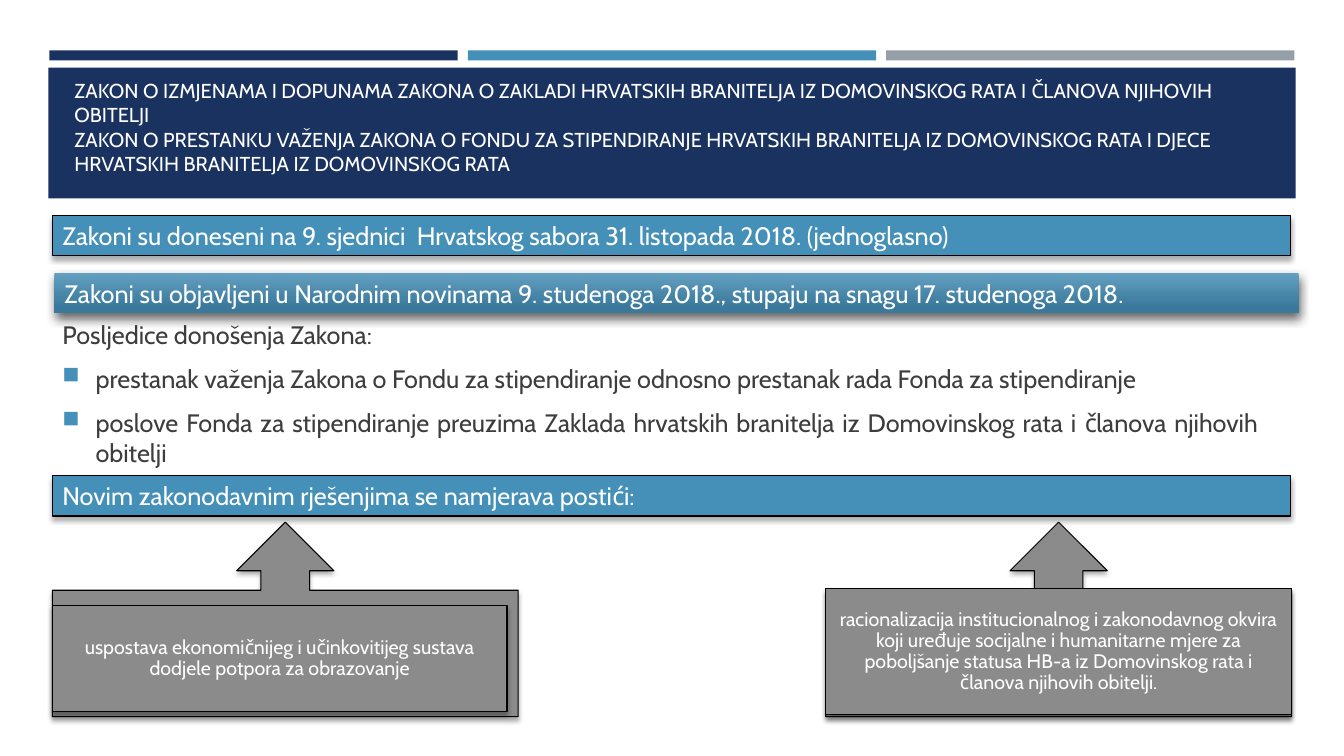
from dataclasses import dataclass
from typing import NamedTuple, Optional

from lxml import etree
from pptx import Presentation, util as u
from pptx.dml.color import RGBColor
from pptx.enum import shapes, text
from pptx.oxml import ns

RECT = shapes.MSO_SHAPE.RECTANGLE
CALLOUT = shapes.MSO_SHAPE.UP_ARROW_CALLOUT
ALIGN = text.PP_ALIGN
ANCHOR = text.MSO_ANCHOR


class Box(NamedTuple):
    """Left, top, width and height in percent of the slide's size."""
    left: float
    top: float
    width: float
    height: float


class Shadow(NamedTuple):
    opacity: int
    blur: float
    distance: float
    angle: int


@dataclass(frozen=True)
class Theme:
    font: str = "Cabin"
    navy: str = "1A3260"
    blue: str = "4590B8"
    silver: str = "969FA7"
    gray: str = "8B8B8B"
    ink: str = "3D3D3D"
    white: str = "FFFFFF"
    black: str = "000000"
    gradient: tuple = (("639FC1", 0), ("3A799B", 0.84))
    title_size: float = 14.4
    body_size: float = 18
    panel_size: float = 14
    soft: Shadow = Shadow(32, 3.5, 2.2, 90)
    strong: Shadow = Shadow(60, 7, 3, 84)


@dataclass(frozen=True)
class Banner:
    box: Box
    words: str
    raised: bool = False


@dataclass(frozen=True)
class Goal:
    callout: Box
    panel: Box
    words: str


THEME = Theme()

STRIPES = (THEME.navy, THEME.blue, THEME.silver)
STRIPE = Box(3.68, 6.67, 30.38, 1.33)
STRIPE_PITCH = 31.13

HEADER = Box(3.6, 8.93, 92.8, 17.33)
TITLE = Box(4.8, 9.73, 90.47, 17.33)
LAWS = (
    "ZAKON O IZMJENAMA I DOPUNAMA ZAKONA O ZAKLADI HRVATSKIH BRANITELJA IZ "
    "DOMOVINSKOG RATA I ČLANOVA NJIHOVIH OBITELJI",
    "ZAKON O PRESTANKU VAŽENJA ZAKONA O FONDU ZA STIPENDIRANJE HRVATSKIH "
    "BRANITELJA IZ DOMOVINSKOG RATA I DJECE HRVATSKIH BRANITELJA IZ "
    "DOMOVINSKOG RATA",
)

CONSEQUENCES_BOX = Box(3.9, 39.33, 90.47, 25.47)
CONSEQUENCES = (
    "Posljedice donošenja Zakona:",
    "prestanak važenja Zakona o Fondu za stipendiranje odnosno prestanak rada "
    "Fonda za stipendiranje",
    "poslove Fonda za stipendiranje preuzima Zaklada hrvatskih branitelja iz "
    "Domovinskog rata i članova njihovih obitelji",
)

BANNERS = (
    Banner(Box(3.9, 28.53, 92.12, 5.33),
           "Zakoni su doneseni na 9. sjednici  Hrvatskog sabora 31. listopada "
           "2018. (jednoglasno)"),
    Banner(Box(3.9, 62.93, 92.12, 5.33),
           "Novim zakonodavnim rješenjima se namjerava postići:"),
    Banner(Box(4.05, 36.13, 92.57, 5.33),
           "Zakoni su objavljeni u Narodnim novinama 9. studenoga 2018., "
           "stupaju na snagu 17. studenoga 2018.", raised=True),
)

GOALS = (
    Goal(Box(3.9, 69.07, 34.66, 25.73), Box(3.9, 80.13, 33.83, 14),
         "uspostava ekonomičnijeg i učinkovitijeg sustava dodjele potpora za "
         "obrazovanje"),
    Goal(Box(61.44, 69.07, 34.66, 25.73), Box(61.44, 77.87, 34.66, 16.67),
         "racionalizacija institucionalnog i zakonodavnog okvira koji uređuje "
         "socijalne i humanitarne mjere za poboljšanje statusa HB-a iz "
         "Domovinskog rata i članova njihovih obitelji."),
)

deck = Presentation()
deck.slide_width, deck.slide_height = u.Inches(13.33), u.Inches(7.5)
slide = deck.slides.add_slide(deck.slide_layouts[6])


def place(box: Box) -> tuple:
    across, down = deck.slide_width / 100, deck.slide_height / 100
    return (int(box.left * across), int(box.top * down),
            int(box.width * across), int(box.height * down))


def add_shadow(shape, shadow: Shadow) -> None:
    effects = shape.element.spPr.find(ns.qn("a:effectLst"))
    outer = etree.SubElement(
        effects, ns.qn("a:outerShdw"), blurRad=str(u.Pt(shadow.blur)),
        dist=str(u.Pt(shadow.distance)), dir=str(shadow.angle * 60000),
        algn="ctr", rotWithShape="0")
    color = etree.SubElement(outer, ns.qn("a:srgbClr"), val=THEME.black)
    etree.SubElement(color, ns.qn("a:alpha"), val=str(shadow.opacity * 1000))


def add_block(kind, box: Box, fill: str, outlined: bool = False,
              shadow: Optional[Shadow] = None):
    block = slide.shapes.add_shape(kind, *place(box))
    block.shadow.inherit = False
    block.fill.solid()
    block.fill.fore_color.rgb = RGBColor.from_string(fill)
    if outlined:
        block.line.color.rgb = RGBColor.from_string(THEME.black)
        block.line.width = u.Pt(0.75)
    else:
        block.line.fill.background()
    if shadow:
        add_shadow(block, shadow)
    return block


def write(shape, lines: tuple, size: float, color: str, align=ALIGN.LEFT,
          anchor=ANCHOR.TOP):
    frame = shape.text_frame
    frame.text = "\n".join(lines)
    frame.word_wrap = True
    frame.vertical_anchor = anchor
    for paragraph in frame.paragraphs:
        paragraph.alignment = align
        for run in paragraph.runs:
            run.font.name = THEME.font
            run.font.size = u.Pt(size)
            run.font.color.rgb = RGBColor.from_string(color)
    return frame


def add_bullet(paragraph) -> None:
    paragraph.alignment = ALIGN.JUSTIFY
    props = paragraph._p.get_or_add_pPr()
    props.set("marL", str(u.Inches(0.33)))
    props.set("indent", str(u.Inches(-0.33)))
    color = etree.SubElement(props, ns.qn("a:buClr"))
    etree.SubElement(color, ns.qn("a:srgbClr"), val=THEME.blue)
    etree.SubElement(props, ns.qn("a:buSzPct"), val="92000")
    etree.SubElement(props, ns.qn("a:buChar"), char="■")


# Stripes and header
for column, stripe_color in enumerate(STRIPES):
    left = STRIPE.left + column * STRIPE_PITCH
    add_block(RECT, STRIPE._replace(left=left), stripe_color)
add_block(RECT, HEADER, THEME.navy)
write(slide.shapes.add_textbox(*place(TITLE)), LAWS, THEME.title_size, THEME.white)

# Consequences of the laws
consequences = write(slide.shapes.add_textbox(*place(CONSEQUENCES_BOX)),
                     CONSEQUENCES, THEME.body_size, THEME.ink,
                     anchor=ANCHOR.MIDDLE)
for point in consequences.paragraphs:
    point.space_before, point.space_after = u.Pt(3.6), u.Pt(6)
for point in consequences.paragraphs[1:]:
    add_bullet(point)

# Banners
for banner in BANNERS:
    bar = add_block(RECT, banner.box, THEME.blue, not banner.raised,
                    THEME.strong if banner.raised else THEME.soft)
    if banner.raised:
        bar.fill.gradient()
        bar.fill.gradient_angle = 270
        for stop, (shade, position) in zip(bar.fill.gradient_stops, THEME.gradient):
            stop.color.rgb = RGBColor.from_string(shade)
            stop.position = position
    write(bar, (banner.words,), THEME.body_size, THEME.white)

# Goals with arrows pointing at the last banner
for goal in GOALS:
    add_block(CALLOUT, goal.callout, THEME.gray, True, THEME.soft)
    panel = add_block(RECT, goal.panel, THEME.gray, True, THEME.soft)
    label = write(panel, (goal.words,), THEME.panel_size, THEME.white,
                  ALIGN.CENTER, ANCHOR.MIDDLE)
    label.paragraphs[0].line_spacing = 0.9
    label.margin_left = label.margin_right = u.Inches(0.08)
    label.margin_top = label.margin_bottom = u.Inches(0.08)

deck.save("out.pptx")
